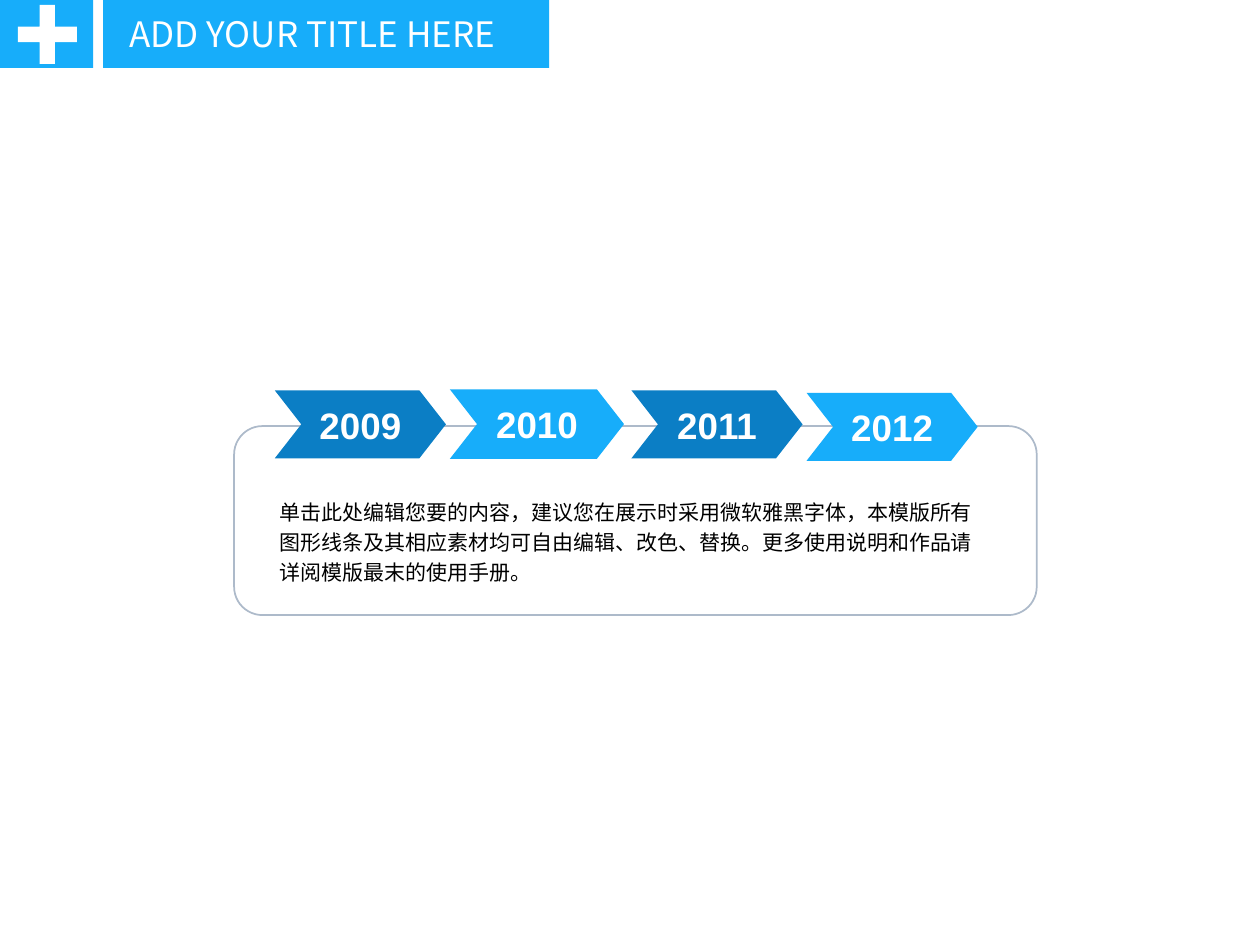
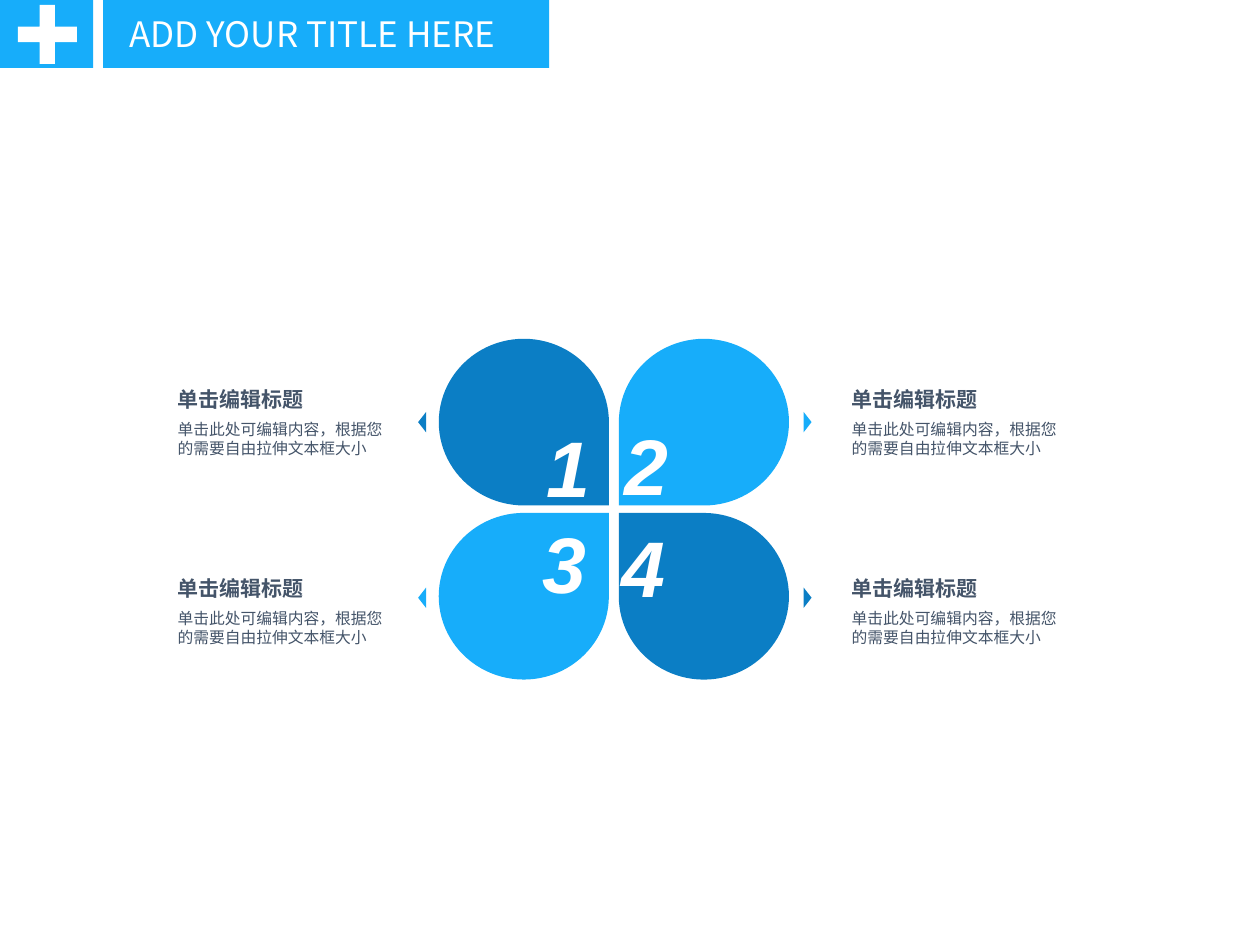
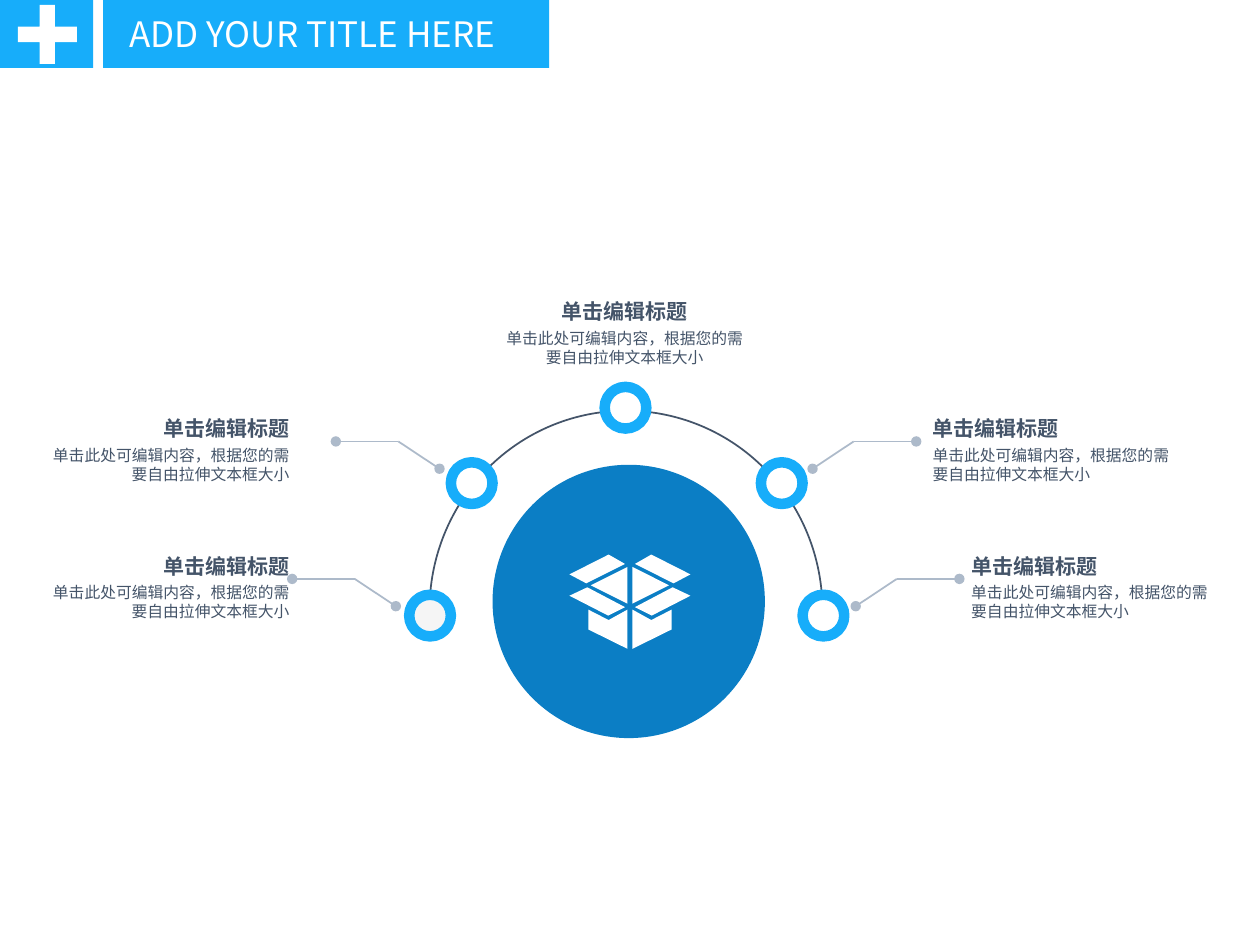
"""Build three blue slides: a year ribbon, a four-petal figure and an arc of nodes."""
from typing import Any, NamedTuple, Optional

from lxml.etree import SubElement
from pptx import Presentation
from pptx.dml.color import RGBColor
from pptx.enum.shapes import MSO_CONNECTOR as Connector, MSO_SHAPE as Preset
from pptx.enum.text import MSO_ANCHOR as Anchor, MSO_AUTO_SIZE as AutoSize, PP_ALIGN as Align
from pptx.oxml.ns import qn
from pptx.shapes.autoshape import Shape
from pptx.slide import Slide
from pptx.util import Cm, Pt

SKY, OCEAN, SLATE, MIST = "17ADFA", "0B7EC5", "445469", "ADBACA"
WHITE, PALE, BLACK = "FFFFFF", "F5F5F5", "000000"
LATIN, CHINESE = "Arial", "Noto Sans CJK SC"
HEADING = "单击编辑标题"
DETAIL = "单击此处可编辑内容，根据您的需要自由拉伸文本框大小"
INTRO = (
    "单击此处编辑您要的内容，建议您在展示时采用微软雅黑字体，本模版所有图形线条及其相应素材"
    "均可自由编辑、改色、替换。更多使用说明和作品请详阅模版最末的使用手册。"
)
MARGINS = ("margin_left", "margin_top", "margin_right", "margin_bottom")


class Box(NamedTuple):
    """A frame in centimetres."""
    left: float
    top: float
    width: float
    height: float


class TextStyle(NamedTuple):
    """The look of one piece of text."""
    size: float
    color: str
    bold: bool = False
    italic: bool = False
    font: str = LATIN
    align: Align = Align.LEFT
    line_spacing: Optional[float] = None


class YearArrow(NamedTuple):
    """A chevron carrying a year."""
    year: str
    box: Box
    color: str


class Petal(NamedTuple):
    """A numbered petal with its pointer and label."""
    number: str
    center: tuple[float, float]
    turn: int
    color: str
    number_at: tuple[float, float]
    pointer: tuple[float, float]
    pointer_turn: int
    label_at: tuple[float, float]


class Label(NamedTuple):
    """A heading with a detail line below it."""
    left: float
    top: float
    align: Align


class Node(NamedTuple):
    """A ring on the arc, given by its centre."""
    x: float
    y: float
    fill: str = WHITE


class Leader(NamedTuple):
    """A bent line that starts beside a node and runs left (-1) or right (1)."""
    x: float
    y: float
    side: int


YEAR_ARROWS = (
    YearArrow("2009", Box(5.54, 7.87, 3.45, 1.37), OCEAN),
    YearArrow("2010", Box(9.07, 7.85, 3.51, 1.4), SKY),
    YearArrow("2011", Box(12.73, 7.87, 3.45, 1.37), OCEAN),
    YearArrow("2012", Box(16.26, 7.92, 3.45, 1.37), SKY),
)
PETALS = (
    Petal("1", (10.56, 8.51), 90, OCEAN, (10.77, 8.31), (8.51, 8.51), 270, (3.58, 7.8)),
    Petal("2", (14.19, 8.51), 180, SKY, (12.34, 8.28), (16.28, 8.51), 90, (17.17, 7.8)),
    Petal("3", (10.56, 12.02), 0, SKY, (10.69, 10.26), (8.51, 12.05), 270, (3.58, 11.61)),
    Petal("4", (14.19, 12.02), 270, OCEAN, (12.27, 10.34), (16.28, 12.05), 90, (17.17, 11.61)),
)
NODES = (
    Node(12.61, 8.22), Node(15.76, 9.74), Node(8.67, 12.41, PALE),
    Node(16.6, 12.41), Node(9.51, 9.74),
)
LEADERS = (
    Leader(7.98, 12.22, -1), Leader(8.86, 9.45, -1),
    Leader(16.38, 9.45, 1), Leader(17.25, 12.22, 1),
)
ARC_LABELS = (
    Label(18.8, 8.38, Align.LEFT), Label(19.58, 11.15, Align.LEFT),
    Label(0.97, 8.38, Align.RIGHT), Label(0.97, 11.15, Align.RIGHT),
    Label(10.16, 6.02, Align.CENTER),
)
CARTON_AXIS = 12.7
CARTON_LEFT_HALF = (
    ((-0.79, 11.8), (-0.05, 11.43), (-0.05, 12.17)),
    ((-0.1, 12.24), (-0.86, 11.84), (-1.22, 12.01), (-0.44, 12.41)),
    ((-0.43, 11.18), (-1.22, 11.58), (-0.88, 11.76), (-0.1, 11.37)),
    ((-0.84, 12.29), (-0.43, 12.5), (-0.05, 12.29), (-0.05, 13.08), (-0.84, 12.69)),
)


def rgb(color: str) -> RGBColor:
    """Turn a hex string into a colour."""
    return RGBColor.from_string(color)


def apply(target: Any, values: dict[str, Any]) -> None:
    """Set every attribute of the dict on the target."""
    for name, value in values.items():
        setattr(target, name, value)


def centered(x: float, y: float, width: float, height: float) -> Box:
    """Return the frame of the given size around a centre."""
    return Box(x - width / 2, y - height / 2, width, height)


def paint(shape: Shape, fill: Optional[str], line: Optional[str] = None, width: float = 1) -> None:
    """Give a shape its fill and outline, without a shadow."""
    shape.shadow.inherit = False
    if fill:
        shape.fill.solid()
        shape.fill.fore_color.rgb = rgb(fill)
    else:
        shape.fill.background()
    if line:
        shape.line.color.rgb = rgb(line)
        shape.line.width = Pt(width)
    else:
        shape.line.fill.background()


def draw_shape(shapes: Any, preset: Preset, box: Box, fill: Optional[str],
               line: Optional[str] = None, width: float = 1, rotation: float = 0,
               adjustments: tuple[float, ...] = ()) -> Shape:
    """Add a painted preset shape."""
    shape = shapes.add_shape(preset, *map(Cm, box))
    shape.rotation = rotation
    for index, value in enumerate(adjustments):
        shape.adjustments[index] = value
    paint(shape, fill, line, width)
    return shape


def write(shape: Shape, text: str, style: TextStyle) -> None:
    """Put styled text into a shape."""
    paragraph = shape.text_frame.paragraphs[0]
    apply(paragraph, {"alignment": style.align, "line_spacing": style.line_spacing})
    run = paragraph.add_run()
    run.text = text
    apply(run.font, {"size": Pt(style.size), "bold": style.bold,
                     "italic": style.italic, "name": style.font})
    run.font.color.rgb = rgb(style.color)
    SubElement(run.font._element, qn("a:ea")).set("typeface", CHINESE)


def draw_text(shapes: Any, box: Box, text: str, style: TextStyle, inset: bool = False) -> None:
    """Add a wrapping text box, with or without the default margins."""
    text_box = shapes.add_textbox(*map(Cm, box))
    values = {"word_wrap": True, "auto_size": AutoSize.SHAPE_TO_FIT_TEXT}
    if not inset:
        values.update(dict.fromkeys(MARGINS, 0))
    apply(text_box.text_frame, values)
    write(text_box, text, style)


def draw_label(slide: Slide, label: Label, heading_width: float, detail_width: float,
               gap: float) -> None:
    """Add a heading and the detail text below it."""
    draw_text(slide.shapes, Box(label.left, label.top, heading_width, 0.51), HEADING,
              TextStyle(12, SLATE, bold=True, align=label.align))
    draw_text(slide.shapes, Box(label.left, label.top + gap, detail_width, 0.76), DETAIL,
              TextStyle(9, SLATE, align=label.align))


def draw_line(slide: Slide, start: tuple[float, float], end: tuple[float, float],
              dotted_end: str) -> None:
    """Add a thin line with an oval at its headEnd or tailEnd."""
    connector = slide.shapes.add_connector(Connector.STRAIGHT, *map(Cm, (*start, *end)))
    connector.line.color.rgb = rgb(MIST)
    connector.line.width = Pt(1)
    SubElement(connector.line._get_or_add_ln(), qn(f"a:{dotted_end}")).set("type", "oval")
    SubElement(connector._element.spPr, qn("a:effectLst"))


def draw_leader(slide: Slide, leader: Leader) -> None:
    """Add the slanted and the level part of a leader."""
    bend = (leader.x + 0.83 * leader.side, leader.y - 0.55)
    draw_line(slide, (leader.x, leader.y), bend, "headEnd")
    draw_line(slide, bend, (bend[0] + 1.26 * leader.side, bend[1]), "tailEnd")


def draw_carton(slide: Slide) -> None:
    """Add the open carton, mirrored about its vertical axis."""
    panels = [
        [(Cm(CARTON_AXIS + side * x), Cm(y)) for x, y in panel]
        for side in (1, -1) for panel in CARTON_LEFT_HALF
    ]
    builder = slide.shapes.build_freeform(*panels[0][0])
    builder.add_line_segments(panels[0][1:])
    for panel in panels[1:]:
        builder.move_to(*panel[0])
        builder.add_line_segments(panel[1:])
    paint(builder.convert_to_shape(), WHITE)


def draw_header(slide: Slide) -> None:
    """Add the grouped title band with its plus sign."""
    shapes = slide.shapes.add_group_shape().shapes
    draw_shape(shapes, Preset.RECTANGLE, Box(0, 0, 1.88, 1.37), SKY)
    draw_shape(shapes, Preset.CROSS, Box(0.36, 0.1, 1.19, 1.19), WHITE, adjustments=(0.37,))
    draw_shape(shapes, Preset.RECTANGLE, Box(2.08, 0, 8.99, 1.37), SKY)
    draw_text(shapes, Box(2.36, 0.13, 8.46, 1.12), "ADD YOUR TITLE HERE",
              TextStyle(20, WHITE, font=CHINESE), inset=True)


def build_years(slide: Slide) -> None:
    """Draw the row of years over a framed text."""
    draw_shape(slide.shapes, Preset.ROUNDED_RECTANGLE, Box(4.72, 8.59, 16.18, 3.81),
               WHITE, MIST, adjustments=(0.15,))
    for arrow in YEAR_ARROWS:
        chevron = draw_shape(slide.shapes, Preset.CHEVRON, arrow.box, arrow.color,
                             adjustments=(0.39,))
        apply(chevron.text_frame, {"word_wrap": False, "vertical_anchor": Anchor.MIDDLE})
        write(chevron, arrow.year, TextStyle(21, WHITE, bold=True, align=Align.CENTER))
    draw_text(slide.shapes, Box(5.64, 9.96, 14.17, 1.85), INTRO,
              TextStyle(12, BLACK, line_spacing=1.2))


def build_petals(slide: Slide) -> None:
    """Draw the four numbered petals with their labels."""
    for petal in PETALS:
        size = (3.36, 3.43) if petal.turn % 180 else (3.43, 3.36)
        draw_shape(slide.shapes, Preset.TEAR, centered(*petal.center, *size), petal.color,
                   rotation=petal.turn)
        draw_shape(slide.shapes, Preset.ISOSCELES_TRIANGLE, centered(*petal.pointer, 0.41, 0.16),
                   petal.color, rotation=petal.pointer_turn)
    for petal in PETALS:
        draw_text(slide.shapes, Box(*petal.number_at, 1.47, 2.18), petal.number,
                  TextStyle(45, WHITE, bold=True, italic=True), inset=True)
        draw_label(slide, Label(*petal.label_at, Align.LEFT), 2.69, 4.28, 0.66)


def build_arc(slide: Slide) -> None:
    """Draw the hub, the arc of nodes and their labels."""
    draw_shape(slide.shapes, Preset.ARC, Box(8.66, 8.28, 7.92, 8.03), None, SLATE,
               adjustments=(108, 0))
    for node in NODES:
        draw_shape(slide.shapes, Preset.OVAL, centered(node.x, node.y, 0.84, 0.84),
                   node.fill, SKY, 6)
    for leader in LEADERS:
        draw_leader(slide, leader)
    draw_shape(slide.shapes, Preset.OVAL, Box(9.93, 9.37, 5.49, 5.51), OCEAN)
    draw_carton(slide)
    for label in ARC_LABELS:
        draw_label(slide, label, 4.87, 4.86, 0.6)


def main() -> None:
    """Build and save the presentation."""
    presentation = Presentation()
    apply(presentation, {"slide_width": Cm(25.4), "slide_height": Cm(19.05)})
    for build in (build_years, build_petals, build_arc):
        slide = presentation.slides.add_slide(presentation.slide_layouts[6])
        build(slide)
        draw_header(slide)
    presentation.save("out.pptx")


if __name__ == "__main__":
    main()
